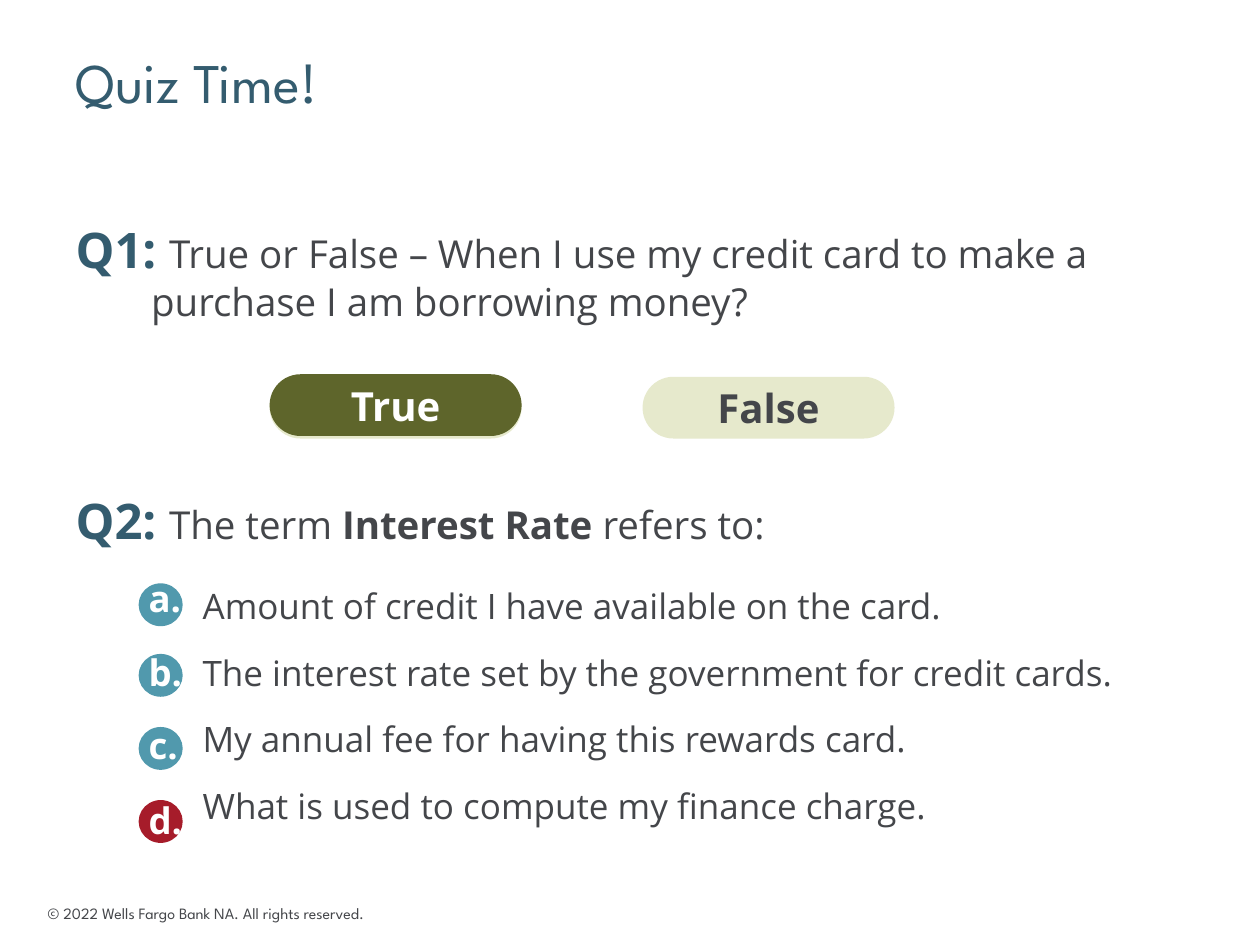
"""Build the credit card quiz slide."""
from pptx import Presentation
from pptx.dml.color import RGBColor
from pptx.enum.shapes import MSO_SHAPE
from pptx.enum.text import MSO_ANCHOR, MSO_AUTO_SIZE, PP_ALIGN
from pptx.oxml.xmlchemy import OxmlElement
from pptx.util import Inches, Pt

COLORS = {
    "heading": "345C6F",
    "text": "44464A",
    "white": "FFFFFF",
    "olive": "5E652B",
    "pale": "E6E9CC",
    "teal": "5199AD",
    "red": "A61C2A",
}
HEADING_FONT = "League Spartan"
BODY_FONT = "Open Sans"


class QuizSlide:
    """Hold the style and the current slide."""

    def __init__(self, deck):
        self.page = deck.slides.add_slide(deck.slide_layouts[1])

    def style(self, font, size, color="text", bold=False, name=BODY_FONT):
        font.name = name
        font.size = Pt(size)
        font.bold = bold
        font.color.rgb = RGBColor.from_string(COLORS[color])

    def place(self, box, left, top, width, height):
        box.left, box.top = Inches(left), Inches(top)
        box.width, box.height = Inches(width), Inches(height)

    def prepare(self, box, margin=True):
        frame = box.text_frame
        frame.word_wrap = True
        frame.auto_size = MSO_AUTO_SIZE.NONE
        frame.vertical_anchor = MSO_ANCHOR.TOP
        if not margin:
            frame.margin_left = frame.margin_right = 0
            frame.margin_top = frame.margin_bottom = 0
        return frame

    def title(self, text, *area):
        box = self.page.shapes.title
        self.place(box, *area)
        frame = self.prepare(box, margin=False)
        frame.text = text
        paragraph = frame.paragraphs[0]
        paragraph.alignment = PP_ALIGN.LEFT
        paragraph.line_spacing = 1.05
        self.style(paragraph.runs[0].font, 32, "heading", name=HEADING_FONT)

    def question(self, box, label, spans, *area):
        self.place(box, *area)
        paragraph = self.prepare(box, margin=False).paragraphs[0]
        properties = paragraph._p.get_or_add_pPr()
        properties.set("marL", str(Inches(0.6)))
        properties.set("indent", str(Inches(-0.6)))
        properties.append(OxmlElement("a:buNone"))
        paragraph.space_before = Pt(0)
        paragraph.space_after = Pt(12)
        heading = paragraph.add_run()
        heading.text = label
        self.style(heading.font, 28, "heading", bold=True)
        for text, bold in spans:
            span = paragraph.add_run()
            span.text = text
            self.style(span.font, 22, bold=bold)

    def text_box(self, lines, size, *area, color="text", bold=False,
                 name=BODY_FONT, gap=0, margin=True):
        box = self.page.shapes.add_textbox(*map(Inches, area))
        frame = self.prepare(box, margin)
        frame.text = "\n".join(lines)
        for index, paragraph in enumerate(frame.paragraphs):
            paragraph.space_before = Pt(gap if index else 0)
            self.style(paragraph.runs[0].font, size, color, bold, name)

    def shape(self, kind, fill, *area):
        shape = self.page.shapes.add_shape(kind, *map(Inches, area))
        shape.shadow.inherit = False
        shape.fill.solid()
        shape.fill.fore_color.rgb = RGBColor.from_string(COLORS[fill])
        shape.line.fill.background()
        return shape

    def pill(self, left, top, fill, text="", color="text"):
        pill = self.shape(MSO_SHAPE.ROUNDED_RECTANGLE, fill, left, top, 2, 0.49)
        pill.adjustments[0] = 0.5
        if text:
            frame = pill.text_frame
            frame.word_wrap = False
            frame.vertical_anchor = MSO_ANCHOR.MIDDLE
            frame.text = text
            paragraph = frame.paragraphs[0]
            paragraph.alignment = PP_ALIGN.CENTER
            self.style(paragraph.runs[0].font, 22.9, color, bold=True)

    def badge(self, letter, top, letter_top, fill):
        self.shape(MSO_SHAPE.OVAL, fill, 1.1, top, 0.35, 0.34)
        self.text_box([letter], 20.9, 1.18, letter_top, 0.27, 0.35,
                      color="white", bold=True, margin=False)


def main():
    deck = Presentation()
    deck.slide_width, deck.slide_height = Inches(10), Inches(7.5)
    quiz = QuizSlide(deck)
    quiz.text_box(["© 2022 Wells Fargo Bank NA. All rights reserved."], 9,
                  0.28, 7.12, 3.05, 0.25, name=HEADING_FONT)
    quiz.title("Quiz Time!", 0.6, 0.35, 9, 1.25)

    first_box = quiz.page.shapes.add_textbox(0, 0, 0, 0)
    quiz.question(first_box, "Q1: ", [
        ("True or False – When I use my credit card to make a purchase "
         "I am borrowing money?", False),
    ], 0.6, 1.74, 9, 1.08)
    quiz.pill(2.14, 2.99, "pale")
    quiz.pill(2.14, 2.97, "olive", "True", "white")
    quiz.pill(5.1, 2.99, "pale", "False")

    quiz.question(quiz.page.placeholders[1], "Q2: ", [
        ("The term ", False), ("Interest Rate ", True), ("refers to:", False),
    ], 0.6, 3.89, 9, 0.74)
    quiz.text_box([
        "Amount of credit I have available on the card.",
        "The interest rate set by the government for credit cards.",
        "My annual fee for having this rewards card.",
        "What is used to compute my finance charge.",
    ], 20, 1.51, 4.59, 7.93, 2.15, gap=14)
    for letter, top, letter_top, fill in (
        ("a.", 4.63, 4.57, "teal"),
        ("b.", 5.19, 5.16, "teal"),
        ("c.", 5.77, 5.74, "teal"),
        ("d.", 6.35, 6.33, "red"),
    ):
        quiz.badge(letter, top, letter_top, fill)
    deck.save("out.pptx")


if __name__ == "__main__":
    main()
